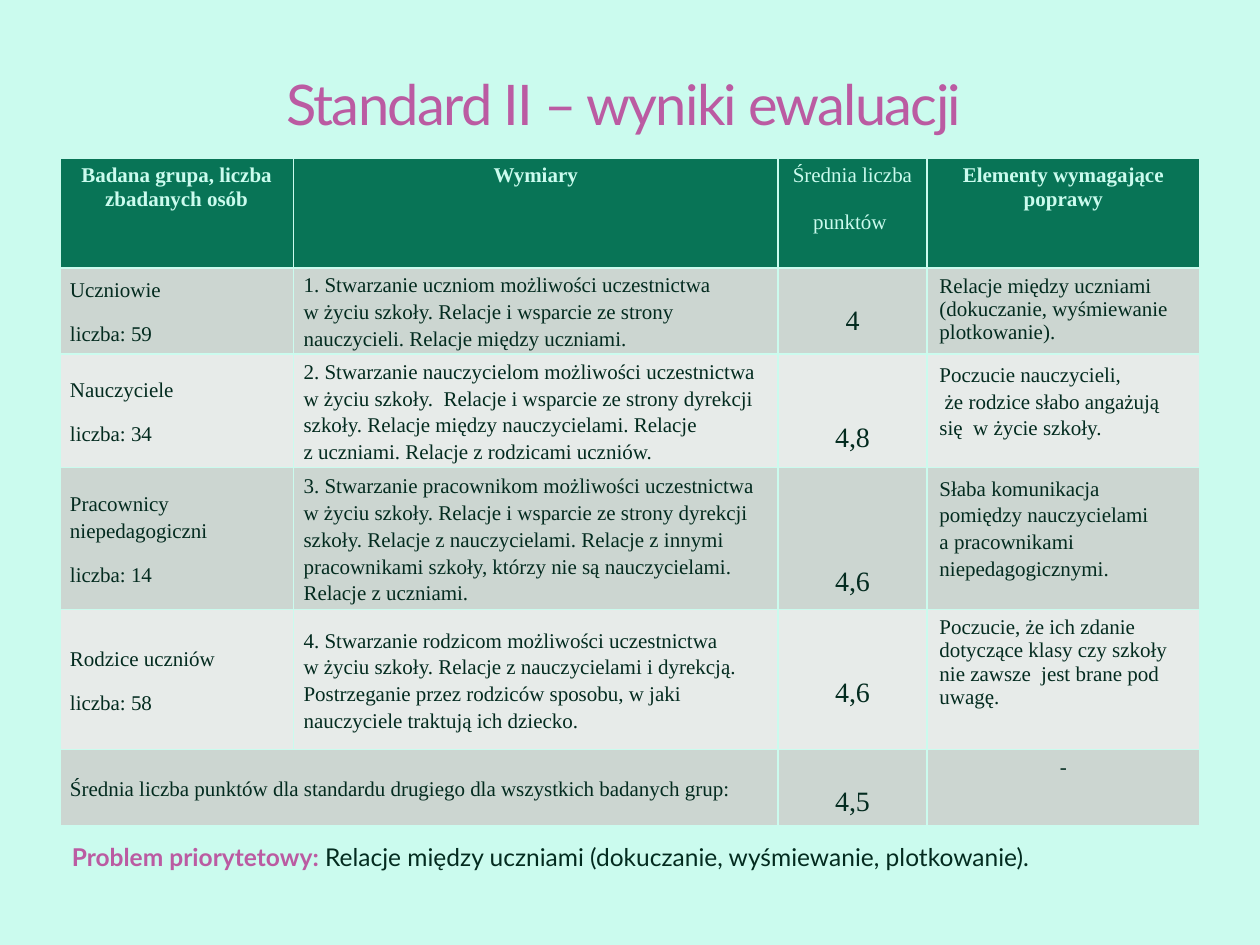
import copy

import pptx
import pptx.dml.color
import pptx.enum.text
import pptx.oxml
import pptx.oxml.ns
import pptx.util

Pt = pptx.util.Pt
RGB = pptx.dml.color.RGBColor.from_string
ALIGN = pptx.enum.text.PP_ALIGN
MID = pptx.enum.text.MSO_ANCHOR.MIDDLE
TOP = pptx.enum.text.MSO_ANCHOR.TOP
NS = pptx.oxml.ns.nsdecls("a")

THEME = {
    "mint": "CBFBEE", "green": "087456", "ink": "032B1F", "pink": "BB5BA2",
    "bands": ("CCD6D1", "E7EBE9"), "edge": "B3DDD2",
    "serif": "Times New Roman", "sans": "Lato",
    "title": 32, "note": 14, "body": 12, "score": 16,
}


def put(item, vals):
    for name, val in vals.items():
        setattr(item, name, val)


def write(para, text, font, color, form=None):
    """Add text to a paragraph; line breaks take the format of the text."""
    put(para, form or {})
    for num, line in enumerate(text.split("\n")):
        if num:
            para.add_line_break()
        run = para.add_run()
        run.text = line
        put(run.font, font)
        run.font.color.rgb = RGB(THEME[color])
    for br in para._p.findall(pptx.oxml.ns.qn("a:br")):
        br.append(copy.deepcopy(run._r.rPr))
    return run


prs = pptx.Presentation()
put(prs, {"slide_width": Pt(720), "slide_height": Pt(540)})
slide = prs.slides.add_slide(prs.slide_layouts[6])
slide.background.fill.solid()
slide.background.fill.fore_color.rgb = RGB(THEME["mint"])

# Results table
heads = ["Badana grupa, liczba zbadanych osób", "Wymiary",
         "Średnia liczba \npunktów ", "Elementy wymagające poprawy"]
groups = [
    ["Uczniowie|liczba: 59",
     "1. Stwarzanie uczniom możliwości uczestnictwa \nw życiu szkoły. Relacje i wsparcie "
     "ze strony nauczycieli. Relacje między uczniami.",
     "4", "Relacje między uczniami (dokuczanie, wyśmiewanie plotkowanie)."],
    ["Nauczyciele|liczba: 34",
     "2. Stwarzanie nauczycielom możliwości uczestnictwa \nw życiu szkoły.  Relacje i "
     "wsparcie ze strony dyrekcji szkoły. Relacje między nauczycielami. Relacje \n"
     "z uczniami. Relacje z rodzicami uczniów.",
     "4,8", "Poczucie nauczycieli,\n że rodzice słabo angażują się  w życie szkoły."],
    ["Pracownicy \nniepedagogiczni|liczba: 14",
     "3. Stwarzanie pracownikom możliwości uczestnictwa \nw życiu szkoły. Relacje i "
     "wsparcie ze strony dyrekcji szkoły. Relacje z nauczycielami. Relacje z innymi "
     "pracownikami szkoły, którzy nie są nauczycielami.\nRelacje z uczniami.",
     "4,6", "Słaba komunikacja pomiędzy nauczycielami \na pracownikami niepedagogicznymi."],
    ["Rodzice uczniów|liczba: 58",
     "4. Stwarzanie rodzicom możliwości uczestnictwa \nw życiu szkoły. Relacje z "
     "nauczycielami i dyrekcją. Postrzeganie przez rodziców sposobu, w jaki nauczyciele "
     "traktują ich dziecko.",
     "4,6", "Poczucie, że ich zdanie dotyczące klasy czy szkoły nie zawsze  jest brane "
     "pod uwagę."],
    ["Średnia liczba punktów dla standardu drugiego dla wszystkich badanych grup:",
     "", "4,5", "-"],
]
widths = [133.5, 277, 85, 156]
heights = [63, 49, 65, 81.2, 80, 43.6]
drops = [0, 1, 2, 3, 2, 1]  # score lines pushed down in each row
loose = {"line_spacing": 1.15, "space_after": Pt(10)}
center = {"alignment": ALIGN.CENTER}

table = slide.shapes.add_table(6, 4, Pt(34.2), Pt(90.2), Pt(sum(widths)), Pt(sum(heights))).table
for col, width in zip(table.columns, widths):
    col.width = Pt(width)
for row, height in zip(table.rows, heights):
    row.height = Pt(height)
table.cell(5, 0).merge(table.cell(5, 1))

for r, texts in enumerate([heads] + groups):
    for c, text in enumerate(texts):
        cell = table.cell(r, c)
        head, score, left = r == 0, r > 0 and c == 2, r > 0 and c < 2
        side, edge = (5.8, 0) if left else (7.2, 3.6)
        put(cell, {
            "margin_left": Pt(side), "margin_right": Pt(side), "margin_bottom": Pt(edge),
            "margin_top": Pt(edge + (17.7 * drops[r] if score else 0)),
            "vertical_anchor": MID if left else TOP,
        })
        for tag in ("lnL", "lnR", "lnT", "lnB"):
            cell._tc.get_or_add_tcPr().append(pptx.oxml.parse_xml(
                f'<a:{tag} {NS} w="12700"><a:solidFill><a:srgbClr val="{THEME["mint"]}"/>'
                f'</a:solidFill></a:{tag}>'))
        cell.fill.solid()
        cell.fill.fore_color.rgb = RGB(THEME["green"] if head else THEME["bands"][(r - 1) % 2])
        if not text:
            continue
        font = {"name": THEME["serif"], "bold": head and c != 2,
                "size": Pt(THEME["score" if score else "body"])}
        if head or score or text == "-":
            form = center
        else:
            form = loose if left or r in (2, 3) else {}
        for num, part in enumerate(text.split("|")):
            frame = cell.text_frame
            para = frame.add_paragraph() if num else frame.paragraphs[0]
            write(para, part, font, "mint" if head else "ink", form)

# Title and closing note
title = slide.shapes.add_textbox(Pt(36), Pt(28), Pt(648), Pt(62)).text_frame
put(title, {"word_wrap": True, "vertical_anchor": MID})
run = write(title.paragraphs[0], "Standard II – wyniki ewaluacji ",
            {"name": THEME["sans"], "size": Pt(THEME["title"])}, "pink", center)
props = run.font._element
props.set("spc", "-100")
props.insert(0, pptx.oxml.parse_xml(
    f'<a:ln {NS} w="3175"><a:solidFill><a:srgbClr val="{THEME["edge"]}">'
    '<a:alpha val="25000"/></a:srgbClr></a:solidFill></a:ln>'))

note = slide.shapes.add_textbox(Pt(34), Pt(477.7), Pt(658), Pt(24)).text_frame
note.word_wrap = True
for text, color, bold in [
    ("Problem priorytetowy: ", "pink", True),
    ("Relacje między uczniami (dokuczanie, wyśmiewanie, plotkowanie).", "ink", False),
]:
    write(note.paragraphs[0], text,
          {"name": THEME["sans"], "size": Pt(THEME["note"]), "bold": bold}, color)

prs.save("out.pptx")
